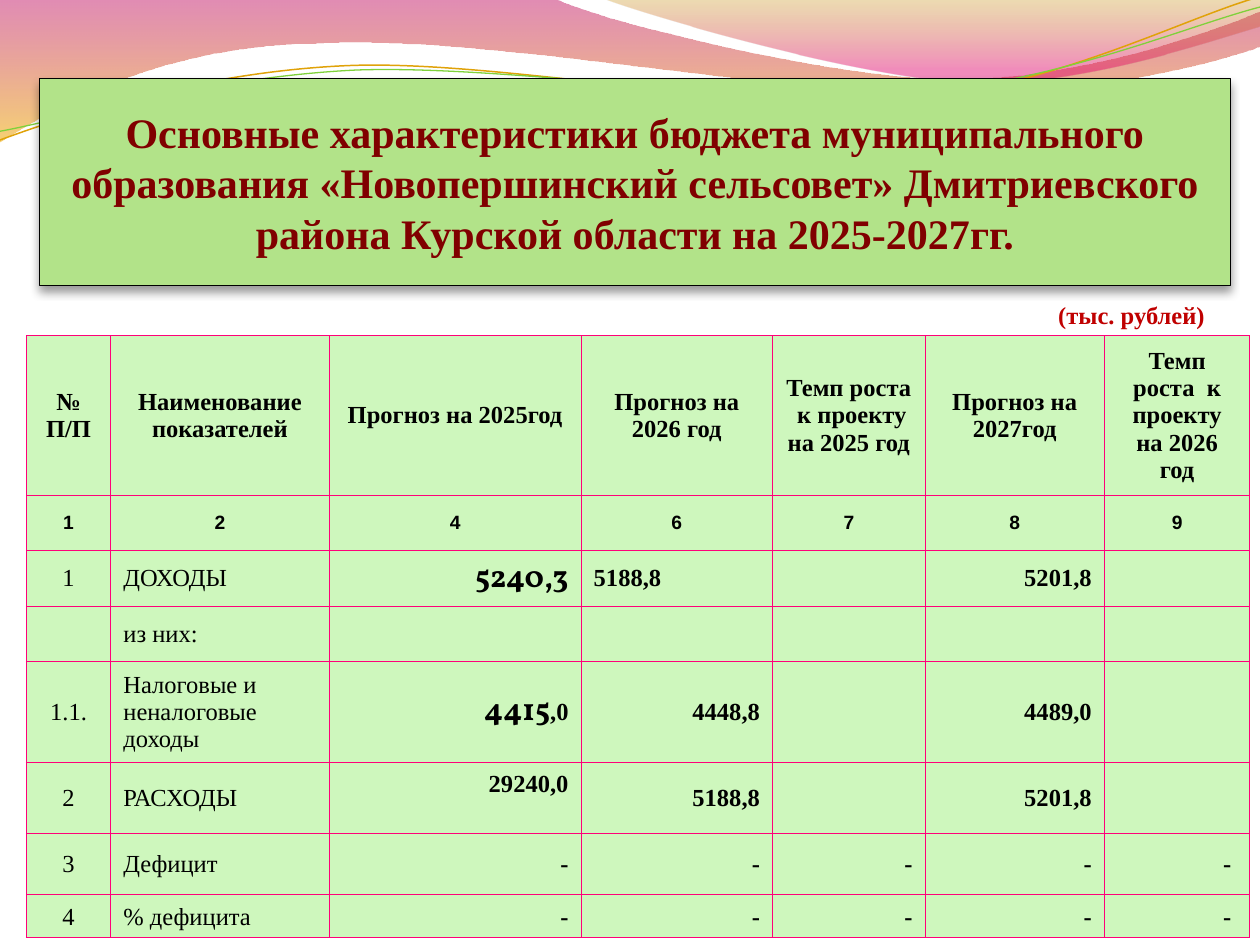
from math import cos, radians, sin

from lxml.etree import SubElement
from pptx import Presentation
from pptx.dml.color import RGBColor
from pptx.enum.shapes import MSO_SHAPE
from pptx.enum.text import MSO_ANCHOR, PP_ALIGN
from pptx.oxml import parse_xml
from pptx.oxml.ns import nsdecls, qn
from pptx.util import Pt


def color(value):
    return RGBColor.from_string(value)


def add_wave(frame, start, segments, closed, rotation=0):
    """Draw straight (x, y) and cubic (six numbers) segments, in points on the page."""
    left, top, width, height = frame
    builder = page.shapes.build_freeform(Pt(left), Pt(top))
    builder.add_line_segments([(Pt(left + width), Pt(top + height))], close=False)
    wave = builder.convert_to_shape()
    wave.shadow.inherit = False
    wave.rotation = rotation
    outline = next(wave._element.iter(qn("a:path")))
    for child in list(outline):
        outline.remove(child)
    turn = radians(-rotation)
    for index, numbers in enumerate([start, *segments]):
        name = "moveTo" if index == 0 else "lnTo" if len(numbers) == 2 else "cubicBezTo"
        command = SubElement(outline, qn(f"a:{name}"))
        for x, y in zip(numbers[::2], numbers[1::2]):
            dx, dy = x - left - width / 2, y - top - height / 2
            SubElement(command, qn("a:pt"),
                       x=str(Pt(width / 2 + dx * cos(turn) - dy * sin(turn))),
                       y=str(Pt(height / 2 + dx * sin(turn) + dy * cos(turn))))
    if closed:
        SubElement(outline, qn("a:close"))
    return wave


deck = Presentation()
deck.slide_width, deck.slide_height = Pt(720), Pt(540)
page = deck.slides.add_slide(deck.slide_layouts[6])

# Decorative waves; gradient stops are (position, colour, opacity in percent)
bands = [
    ((-0.8, -0.8, 721.5, 82), (0, -0.7),
     [(317, -0.7), (343, 12, 478, 45, 546, 45), (615, 45, 690, 19, 720, 6.5),
      (720.7, 26), (708, 32, 626, 55, 537, 54), (448, 54, 275, 20, 185, 24.5),
      (93, 25, 33, 60, -0.7, 81.2)],
     [(0, "BD0059", 45), (1, "F0AB00", 55)]),
    ((345, -0.7, 375, 50.4), (345, -0.7),
     [(366.5, 8, 491, 44.6, 553.7, 46.8), (616, 49.7, 692, 23, 720, 15), (720, 0)],
     [(0, "C38B00", 30), (0.8, "E1006B", 45)]),
]
for frame, start, segments, stops in bands:
    band = add_wave(frame, start, segments, True)
    band.line.fill.background()
    band.fill.gradient()
    band.fill.gradient_angle = 270
    for stop, (position, shade, _) in zip(band.fill.gradient_stops, stops):
        stop.position = position
        stop.color.rgb = color(shade)
    for node, (_, _, opacity) in zip(band._element.spPr.iter(qn("a:srgbClr")), stops):
        SubElement(node, qn("a:alpha"), val=str(opacity * 1000))

strands = [
    ((-1.4, 15.8, 721.4, 51.1), (0, 80),
     [(35, 67, 114, 41, 199, 37.5), (284, 34, 427, 64, 513, 57.5),
      (600, 51, 675, 11, 718.5, -1.5)], "E0A209", 0.85),
    ((-1.4, 21.6, 722.2, 41.8), (0, 75),
     [(34, 69, 118, 44, 204, 40), (290, 37, 430, 60, 516, 54),
      (602, 48, 677.5, 15, 720, 4)], "7FD13B", 0.75),
]
for frame, start, segments, shade, width in strands:
    strand = add_wave(frame, start, segments, False, 357.3)
    strand.fill.background()
    strand.line.color.rgb = color(shade)
    strand.line.width = Pt(width)

# Title
title = page.shapes.add_shape(MSO_SHAPE.RECTANGLE, Pt(22.5), Pt(44.9), Pt(680.6), Pt(118.2))
title.fill.solid()
title.fill.fore_color.rgb = color("B2E389")
title.line.color.rgb = color("000000")
title.line.width = Pt(0.5)
title._element.spPr.append(parse_xml(
    f'<a:effectLst {nsdecls("a")}><a:outerShdw blurRad="{Pt(5.2)}" dist="{Pt(3)}" '
    'dir="5400000" rotWithShape="0"><a:srgbClr val="000000"><a:alpha val="40000"/>'
    '</a:srgbClr></a:outerShdw></a:effectLst>'))
title.text_frame.word_wrap = True
title.text_frame.vertical_anchor = MSO_ANCHOR.MIDDLE
title.text_frame.text = ("Основные характеристики бюджета муниципального образования "
                         "«Новопершинский сельсовет» Дмитриевского района "
                         "Курской области на 2025-2027гг.")
heading = title.text_frame.paragraphs[0]
heading.alignment = PP_ALIGN.CENTER

# Unit of measure
unit = page.shapes.add_textbox(Pt(597.6), Pt(168), Pt(102.2), Pt(24))
unit.text_frame.word_wrap = True
unit.text_frame.text = "(тыс. рублей)"
caption = unit.text_frame.paragraphs[0]

for paragraph, size, shade in [(heading, 24, "800000"), (caption, 14, "C00000")]:
    paragraph.font.name = "Times New Roman"
    paragraph.font.size = Pt(size)
    paragraph.font.bold = True
    paragraph.font.color.rgb = color(shade)

# Budget table
rows = [
    ["№ П/П", "Наименование показателей", "Прогноз на 2025год", "Прогноз на 2026 год",
     "Темп роста  к проекту на 2025 год", "Прогноз на 2027год",
     "Темп роста  к проекту на 2026 год"],
    ["1", "2", "4", "6", "7", "8", "9"],
    ["1", "ДОХОДЫ", "5240,3", "5188,8", "", "5201,8", ""],
    ["", "из них:", "", "", "", "", ""],
    ["1.1.", "Налоговые и неналоговые доходы", "4415,0", "4448,8", "", "4489,0", ""],
    ["2", "РАСХОДЫ", "29240,0", "5188,8", "", "5201,8", ""],
    ["3", "Дефицит", "-", "-", "-", "-", "-\u00a0"],
    ["4", "% дефицита", "-", "-", "-", "-", "-\u00a0"],
]
column_widths = [48.2, 124.8, 144, 109.4, 87.2, 102.4, 83.2]
row_heights = [91.2, 31.6, 31.8, 31.6, 57.6, 40.6, 34.8, 24.4]
accent_lengths = {(2, 2): 6, (4, 2): 4}  # leading characters set in Vollkorn

table = page.shapes.add_table(len(rows), len(column_widths), Pt(15.1), Pt(191.9),
                              Pt(sum(column_widths)), Pt(sum(row_heights))).table
table.first_row = table.horz_banding = False
for column, width in zip(table.columns, column_widths):
    column.width = Pt(width)
for row, height in zip(table.rows, row_heights):
    row.height = Pt(height)

for r, values in enumerate(rows):
    for c, value in enumerate(values):
        cell = table.cell(r, c)
        properties = cell._tc.get_or_add_tcPr()
        for side in ("lnL", "lnR", "lnT", "lnB"):
            properties.append(parse_xml(
                f'<a:{side} {nsdecls("a")} w="{Pt(0.75)}"><a:solidFill>'
                f'<a:srgbClr val="FF0079"/></a:solidFill></a:{side}>'))
        cell.fill.solid()
        cell.fill.fore_color.rgb = color("CEF7BD")
        if r == len(rows) - 1:
            cell.vertical_anchor = MSO_ANCHOR.BOTTOM
        elif (r, c) == (5, 2):
            cell.vertical_anchor = MSO_ANCHOR.TOP
            cell.margin_top = Pt(4.6)
        else:
            cell.vertical_anchor = MSO_ANCHOR.MIDDLE

        paragraph = cell.text_frame.paragraphs[0]
        if r < 2 or c == 0:
            paragraph.alignment = PP_ALIGN.CENTER
        elif c == 1 or (r, c) == (2, 3):
            paragraph.alignment = PP_ALIGN.LEFT
        else:
            paragraph.alignment = PP_ALIGN.RIGHT
        paragraph.font.name = "Arial" if r == 1 else "Times New Roman"
        paragraph.font.size = Pt(11 if r == 1 else 14)
        paragraph.font.bold = r < 2 or c > 1
        paragraph.font.color.rgb = color("000000")

        split = accent_lengths.get((r, c), 0)
        for text, accented in [(value[:split], True), (value[split:], False)]:
            if text:
                span = paragraph.add_run()
                span.text = text
                if accented:
                    span.font.name = "Vollkorn"
                    span.font.size = Pt(18)

deck.save("out.pptx")
